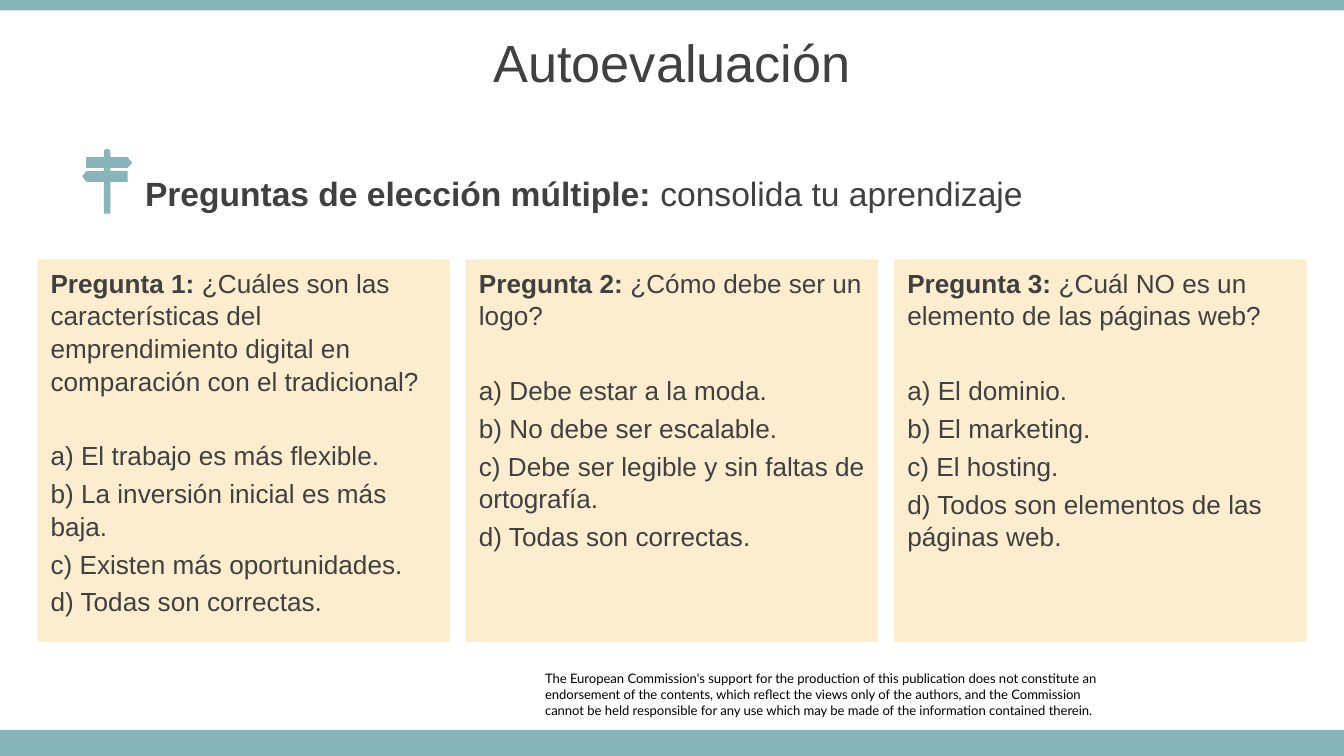
from math import cos, pi, sin
from pptx import Presentation
from pptx.dml.color import RGBColor
from pptx.enum.shapes import MSO_SHAPE
from pptx.enum.text import MSO_ANCHOR, MSO_AUTO_SIZE, PP_ALIGN
from pptx.util import Pt

COLORS = {"teal": "87B5BA", "cream": "FCEDCF", "gray": "404040", "black": "000000"}

CARDS = [
    ("Pregunta 1: ", "¿Cuáles son las características del emprendimiento digital "
     "en comparación con el tradicional?",
     ["a) El trabajo es más flexible.", "b) La inversión inicial es más baja.",
      "c) Existen más oportunidades.", "d) Todas son correctas."]),
    ("Pregunta 2: ", "¿Cómo debe ser un logo?",
     ["a) Debe estar a la moda.", "b) No debe ser escalable.",
      "c) Debe ser legible y sin faltas de ortografía.", "d) Todas son correctas."]),
    ("Pregunta 3: ", "¿Cuál NO es un elemento de las páginas web?",
     ["a) El dominio.", "b) El marketing.", "c) El hosting.",
      "d) Todos son elementos de las páginas web."]),
]
NOTICE = [
    "The European Commission's support for the production of this publication does not "
    "constitute an endorsement of the contents, which reflect the views only of the "
    "authors, and the Commission",
    "cannot be held responsible for any use which may be made of the information "
    "contained therein.",
]


class Painter:
    def __init__(self, slide, font="Arial"):
        self.slide = slide
        self.shapes = slide.shapes
        self.font = font

    def paint(self, shape, color):
        shape.shadow.inherit = False
        shape.fill.solid()
        shape.fill.fore_color.rgb = RGBColor.from_string(COLORS[color])
        shape.line.fill.background()
        return shape

    def style(self, run, size, color="gray", bold=False, font=None):
        run.font.name = font or self.font
        run.font.size = Pt(size)
        run.font.bold = bold
        run.font.color.rgb = RGBColor.from_string(COLORS[color])

    def pair(self, para, lead, rest, size):
        for text, bold in ((lead, True), (rest, False)):
            run = para.add_run()
            run.text = text
            self.style(run, size, bold=bold)

    def bar(self, top, height):
        self.rect(0, top, 720, height, "teal")

    def rect(self, left, top, width, height, color):
        shape = self.shapes.add_shape(
            MSO_SHAPE.RECTANGLE, Pt(left), Pt(top), Pt(width), Pt(height))
        return self.paint(shape, color)

    def box(self, left, top, width, height):
        frame = self.shapes.add_textbox(Pt(left), Pt(top), Pt(width), Pt(height)).text_frame
        frame.word_wrap = True
        return frame

    def title(self, text):
        title = self.shapes.title
        title.left, title.top, title.width, title.height = Pt(0), Pt(10), Pt(720), Pt(46)
        frame = title.text_frame
        frame.text = text
        frame.auto_size = MSO_AUTO_SIZE.NONE
        frame.vertical_anchor = MSO_ANCHOR.MIDDLE
        frame.paragraphs[0].alignment = PP_ALIGN.CENTER
        self.style(frame.paragraphs[0].runs[0], 28)

    def heading(self, lead, rest):
        frame = self.box(70.6, 92.5, 533, 22.3)
        frame.vertical_anchor = MSO_ANCHOR.MIDDLE
        self.pair(frame.paragraphs[0], lead, rest, 18)

    def sign(self, mid, top):
        half = 1.8
        arc = [(half * cos(pi * i / 8), half - half * sin(pi * i / 8)) for i in range(9)]
        right = [(half, 4.4), (11, 4.4), (13.4, 7.4), (11, 10.2), (half, 10.2),
                 (half, 11.8), (11, 11.8), (11, 17.6), (half, 17.6), (half, 34.6)]
        left = [(-half, 34.6), (-half, 17.6), (-11, 17.6), (-13.4, 14.6), (-11, 11.8),
                (-half, 11.8), (-half, 10.2), (-11.2, 10.2), (-11.2, 4.4), (-half, 4.4)]
        points = [(Pt(mid + x), Pt(top + y)) for x, y in right + left + arc[::-1]]
        build = self.shapes.build_freeform(*points[0])
        build.add_line_segments(points[1:], close=True)
        self.paint(build.convert_to_shape(), "teal")

    def card(self, left, lead, ask, picks):
        frame = self.rect(left, 139, 221, 205, "cream").text_frame
        frame.word_wrap = True
        frame.vertical_anchor = MSO_ANCHOR.TOP
        self.pair(frame.paragraphs[0], lead, ask, 14)
        for i, pick in enumerate(picks):
            para = frame.add_paragraph()
            para.text = pick
            para.space_before = Pt(2.8 if i else 22.5)
            self.style(para.runs[0], 14)
        for para in frame.paragraphs:
            para.alignment = PP_ALIGN.LEFT
            para.line_spacing = 1.04

    def notice(self, lines):
        frame = self.box(292, 359.3, 300, 25.2)
        frame.margin_left = frame.margin_right = frame.margin_top = frame.margin_bottom = 0
        frame.text = "\n".join(lines)
        for para in frame.paragraphs:
            self.style(para.runs[0], 7, "black", font="Lato")


def main():
    deck = Presentation()
    deck.slide_width, deck.slide_height = Pt(720), Pt(405)
    pen = Painter(deck.slides.add_slide(deck.slide_layouts[5]))
    pen.notice(NOTICE)
    pen.bar(391, 14)
    pen.bar(0, 5.6)
    pen.title("Autoevaluación")
    pen.heading("Preguntas de elección múltiple: ", "consolida tu aprendizaje")
    pen.sign(57.4, 79.8)
    for i, card in enumerate(CARDS):
        pen.card(20 + i * 229.5, *card)
    deck.save("out.pptx")


if __name__ == "__main__":
    main()
